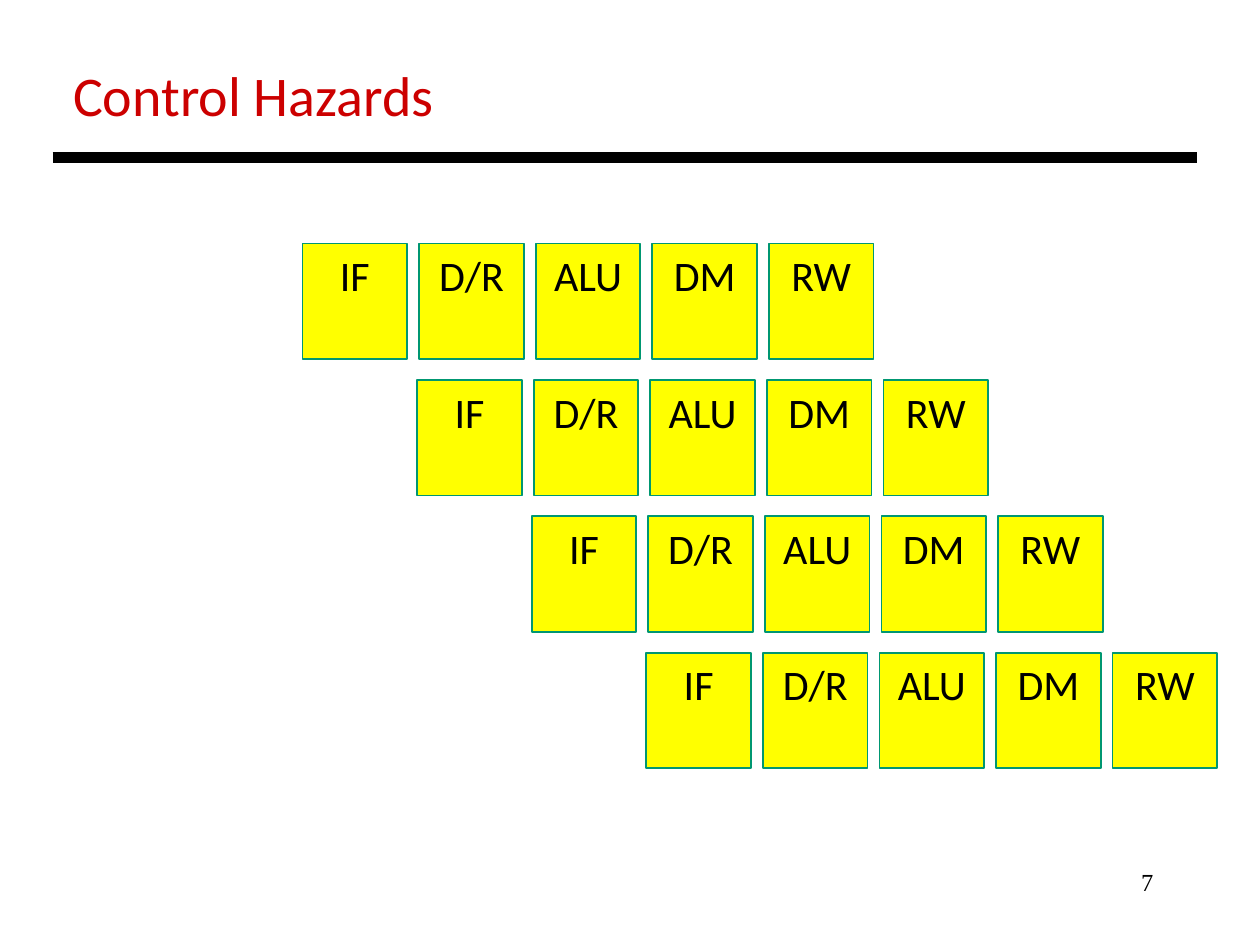
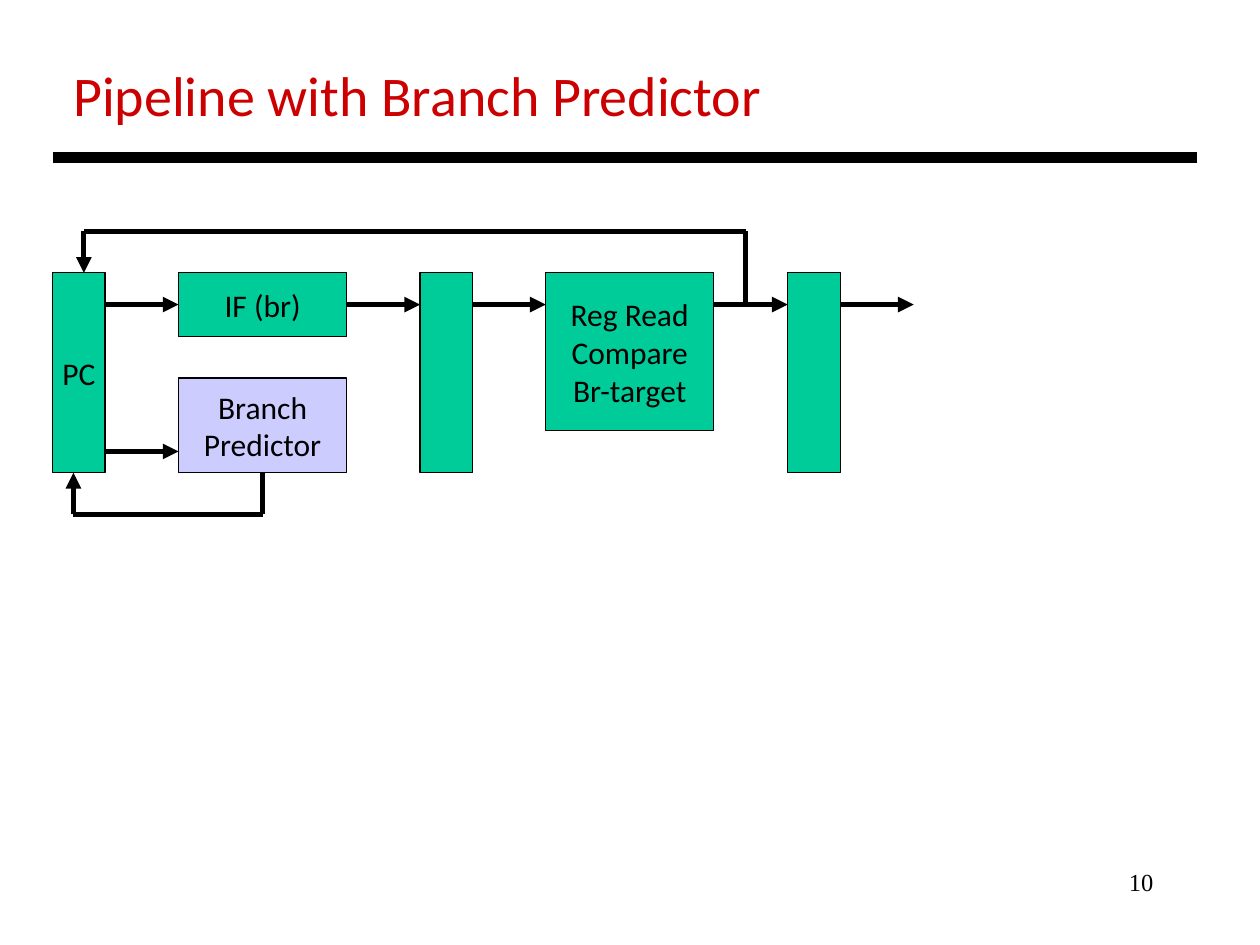
from itertools import pairwise

from lxml.etree import SubElement
from pptx import Presentation
from pptx.dml.color import RGBColor
from pptx.enum.shapes import MSO_CONNECTOR, MSO_SHAPE
from pptx.enum.text import MSO_ANCHOR, PP_ALIGN
from pptx.oxml.ns import qn
from pptx.util import Cm, Pt

BLACK = RGBColor(0x00, 0x00, 0x00)
RED = RGBColor(0xCC, 0x00, 0x00)
YELLOW = RGBColor(0xFF, 0xFF, 0x00)
TEAL = RGBColor(0x00, 0x97, 0x71)
GREEN = RGBColor(0x00, 0xCC, 0x99)
LILAC = RGBColor(0xCC, 0xCC, 0xFF)
TEXT_FONT = "Calibri"
NUMBER_FONT = "Times New Roman"
TOP, LEFT, BOTTOM, RIGHT = range(4)

HAZARDS_TITLE, HAZARDS_NUMBER = "Control Hazards", "7"
STAGES = ["IF", "D/R", "ALU", "DM", "RW"]
INSTRUCTIONS = 4
FIRST_LEFT, FIRST_TOP = 6.1, 4.91
STAGE_WIDTH, STAGE_HEIGHT = 2.11, 2.33
STAGE_STEP = 2.35
INSTRUCTION_SHIFT, INSTRUCTION_STEP = 2.31, 2.75

PREDICTOR_TITLE, PREDICTOR_NUMBER = "Pipeline with Branch Predictor", "10"
UNIT_TOP = 5.5
LATCH_WIDTH, LATCH_HEIGHT, UNIT_WIDTH = 1.06, 4.03, 3.39
UNITS = {
    "pc": ("PC", 1.06, UNIT_TOP, LATCH_WIDTH, LATCH_HEIGHT, GREEN),
    "fetch": ("IF (br)", 3.6, UNIT_TOP, UNIT_WIDTH, 1.28, GREEN),
    "fetch latch": ("", 8.47, UNIT_TOP, LATCH_WIDTH, LATCH_HEIGHT, GREEN),
    "compare": ("Reg Read\nCompare\nBr-target", 11, UNIT_TOP, UNIT_WIDTH, 3.18, GREEN),
    "compare latch": ("", 15.88, UNIT_TOP, LATCH_WIDTH, LATCH_HEIGHT, GREEN),
    "predictor": ("Branch\nPredictor", 3.6, 7.62, UNIT_WIDTH, 1.91, LILAC),
}
FLOW = ["pc", "fetch", "fetch latch", "compare", "compare latch"]
FLOW_Y = 6.14
FLOW_END = 18.42
PREDICTOR_INPUT_Y = 9.1
TARGET_X, TARGET_Y, TARGET_PC_X = 15.03, 4.66, 1.69
PREDICTION_Y, PREDICTION_PC_X = 10.37, 1.48


def set_text(frame, text, size, color=BLACK, font=TEXT_FONT, align=PP_ALIGN.CENTER):
    frame.text = text
    for paragraph in frame.paragraphs:
        paragraph.alignment = align
        paragraph.font.size = Pt(size)
        paragraph.font.name = font
        paragraph.font.color.rgb = color


def add_box(slide, text, left, top, width, height, fill, size=18, line=BLACK, weight=0.75):
    box = slide.shapes.add_shape(
        MSO_SHAPE.RECTANGLE, Cm(left), Cm(top), Cm(width), Cm(height)
    )
    box.shadow.inherit = False
    box.fill.solid()
    box.fill.fore_color.rgb = fill
    box.line.color.rgb = line
    box.line.width = Pt(weight)
    if text:
        set_text(box.text_frame, text, size)
        box.text_frame.word_wrap = False
    return box


def add_line(slide, start, end, weight=3, arrow=False):
    line = slide.shapes.add_connector(
        MSO_CONNECTOR.STRAIGHT, *(Cm(value) for value in (*start, *end))
    )
    line.line.color.rgb = BLACK
    line.line.width = Pt(weight)
    if arrow:
        SubElement(line.line._get_or_add_ln(), qn("a:tailEnd"), type="triangle")
    SubElement(line._element.spPr, qn("a:effectLst"))
    return line


def add_route(slide, *points):
    legs = list(pairwise(points))
    return [add_line(slide, *leg, arrow=leg is legs[-1]) for leg in legs]


def add_page(deck, heading, number):
    slide = deck.slides.add_slide(deck.slide_layouts[5])
    title = slide.shapes.title
    title.left, title.top, title.width, title.height = Cm(1.22), Cm(1.09), Cm(22.9), Cm(1.63)
    title.text_frame.vertical_anchor = MSO_ANCHOR.TOP
    set_text(title.text_frame, heading, 32, RED, align=PP_ALIGN.LEFT)
    add_line(slide, (1.06, 3.18), (24.13, 3.18), weight=6)
    footer = slide.shapes.add_textbox(Cm(18.2), Cm(17.35), Cm(5.3), Cm(1.27))
    footer.text_frame.word_wrap = True
    set_text(footer.text_frame, number, 14, font=NUMBER_FONT, align=PP_ALIGN.RIGHT)
    return slide


def build_hazards(deck):
    slide = add_page(deck, HAZARDS_TITLE, HAZARDS_NUMBER)
    for instruction in range(INSTRUCTIONS):
        for position, stage in enumerate(STAGES):
            left = FIRST_LEFT + instruction * INSTRUCTION_SHIFT + position * STAGE_STEP
            top = FIRST_TOP + instruction * INSTRUCTION_STEP
            box = add_box(slide, stage, left, top, STAGE_WIDTH, STAGE_HEIGHT,
                          YELLOW, size=24, line=TEAL, weight=1)
            box.text_frame.vertical_anchor = MSO_ANCHOR.TOP


def build_predictor(deck):
    slide = add_page(deck, PREDICTOR_TITLE, PREDICTOR_NUMBER)
    boxes = {name: add_box(slide, *unit) for name, unit in UNITS.items()}
    lefts = {name: unit[1] for name, unit in UNITS.items()}
    rights = {name: unit[1] + unit[3] for name, unit in UNITS.items()}

    for source, target in pairwise(FLOW):
        arrow = add_line(slide, (rights[source], FLOW_Y), (lefts[target], FLOW_Y), arrow=True)
        if source == "fetch":
            arrow.begin_connect(boxes[source], RIGHT)
        if target == "fetch":
            arrow.end_connect(boxes[target], LEFT)
    add_route(slide, (rights["compare latch"], FLOW_Y), (FLOW_END, FLOW_Y))
    add_route(slide, (rights["pc"], PREDICTOR_INPUT_Y), (lefts["predictor"], PREDICTOR_INPUT_Y))

    add_route(slide, (TARGET_X, FLOW_Y), (TARGET_X, TARGET_Y),
              (TARGET_PC_X, TARGET_Y), (TARGET_PC_X, UNIT_TOP))

    middle = (lefts["predictor"] + rights["predictor"]) / 2
    latch_bottom = UNIT_TOP + LATCH_HEIGHT
    prediction = add_route(slide, (middle, latch_bottom), (middle, PREDICTION_Y),
                           (PREDICTION_PC_X, PREDICTION_Y), (PREDICTION_PC_X, latch_bottom))
    prediction[0].begin_connect(boxes["predictor"], BOTTOM)


def main():
    deck = Presentation()
    deck.slide_width, deck.slide_height = Cm(25.4), Cm(19.05)
    build_hazards(deck)
    build_predictor(deck)
    deck.save("out.pptx")


if __name__ == "__main__":
    main()
